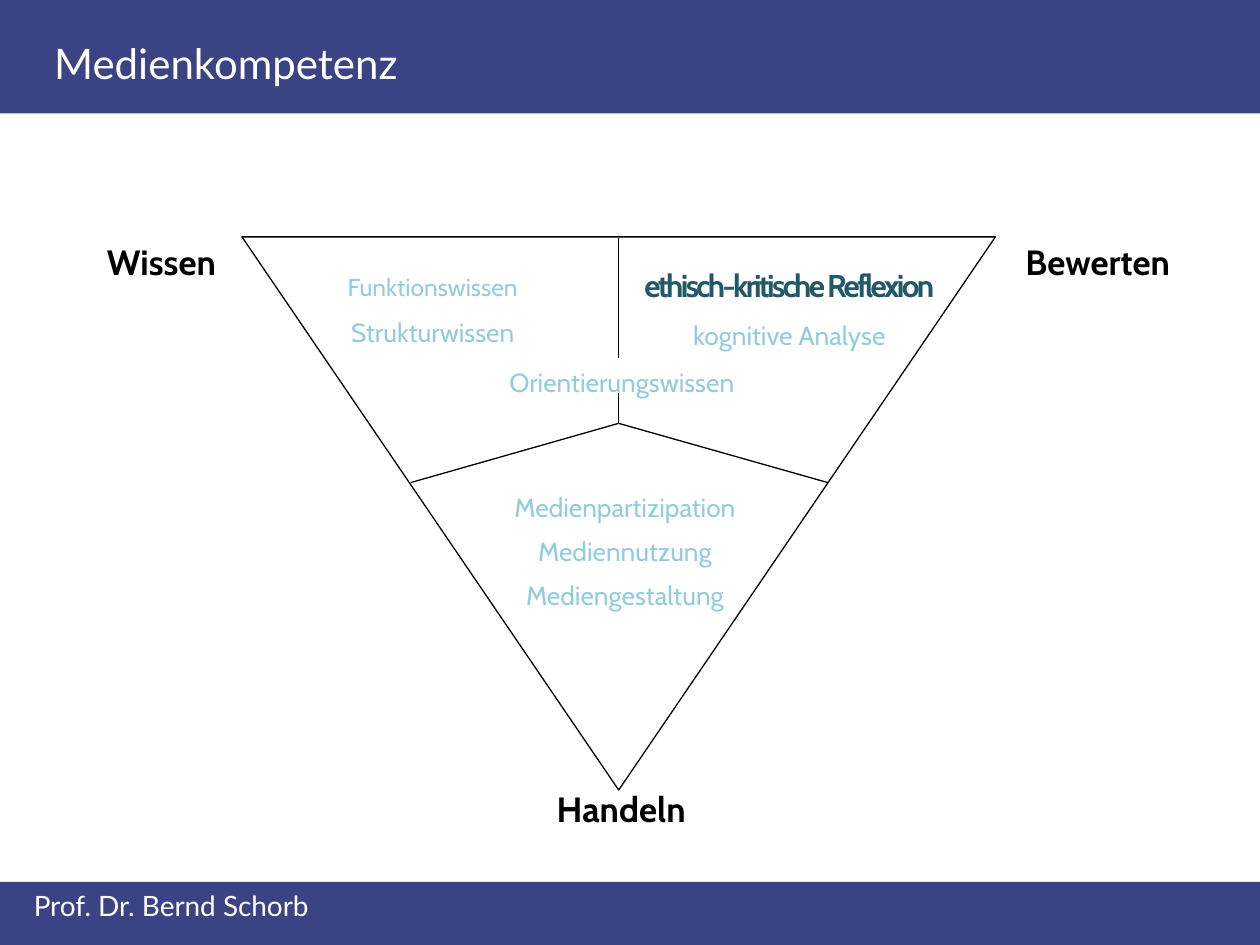
from dataclasses import dataclass

from lxml import etree
from pptx import Presentation
from pptx import util as u
from pptx.dml.color import RGBColor
from pptx.enum import shapes, text
from pptx.oxml.ns import qn


@dataclass(frozen=True)
class Theme:
    """Colours, fonts and type sizes of the slide."""
    band: str = "3C4384"
    white: str = "FFFFFF"
    black: str = "000000"
    light: str = "93CDDD"
    dark: str = "215968"
    head_font: str = "Lato"
    body_font: str = "Cabin"
    title: int = 24
    corner: int = 20
    strong: int = 18
    footer: int = 16
    body: int = 15
    small: int = 14
    line: float = 0.75


T = Theme()
BODY = dict(size=T.body, color=T.light)
CORNER = dict(size=T.corner, color=T.black, bold=True)
CENTER_X, HUB_Y = 4.91, 3.36


def rgb(value):
    """Turn a hex string into a colour."""
    return RGBColor.from_string(value)


def place(sp, left, top, width, height):
    """Set the position and size of a shape."""
    sp.left, sp.top = u.Inches(left), u.Inches(top)
    sp.width, sp.height = u.Inches(width), u.Inches(height)


def add_run(p, content, size, color, font=T.body_font, bold=False, spacing=None):
    """Add formatted text to a paragraph."""
    r = p.add_run()
    r.text = content
    r.font.size, r.font.name, r.font.bold = u.Pt(size), font, bold
    r.font.color.rgb = rgb(color)
    if spacing is not None:
        r.font._element.set("spc", str(int(spacing * 100)))


def write(sp, lines, wrap=False, center=False, leading=None):
    """Fill a shape with (text, format) lines."""
    tf = sp.text_frame
    tf.word_wrap = wrap
    tf.auto_size = text.MSO_AUTO_SIZE.SHAPE_TO_FIT_TEXT
    tf.vertical_anchor = text.MSO_ANCHOR.TOP
    for i, (content, style) in enumerate(lines):
        p = tf.add_paragraph() if i else tf.paragraphs[0]
        p.alignment = text.PP_ALIGN.CENTER if center else text.PP_ALIGN.LEFT
        if leading:
            p.line_spacing = leading
        add_run(p, content, **style)


def add_text(s, box, lines, **layout):
    """Add a text box with formatted lines."""
    write(s.shapes.add_textbox(*map(u.Inches, box)), lines, **layout)


def add_band(s, top, height):
    """Add a full-width coloured band."""
    sp = s.shapes.add_shape(shapes.MSO_SHAPE.RECTANGLE, 0, u.Inches(top),
                            u.Inches(10), u.Inches(height))
    sp.shadow.inherit = False
    sp.fill.solid()
    sp.fill.fore_color.rgb = rgb(T.band)
    sp.line.fill.background()
    return sp


def add_triangle(s, left, top, width, height):
    """Add an outlined triangle that points down."""
    sp = s.shapes.add_shape(shapes.MSO_SHAPE.ISOSCELES_TRIANGLE,
                            *map(u.Inches, (left, top, width, height)))
    sp.rotation = 180
    sp.shadow.inherit = False
    sp.fill.background()
    sp.line.color.rgb = rgb(T.black)
    sp.line.width = u.Pt(T.line)


def add_line(s, *ends):
    """Add a thin straight line."""
    line = s.shapes.add_connector(shapes.MSO_CONNECTOR.STRAIGHT, *map(u.Inches, ends))
    line.line.color.rgb = rgb(T.black)
    line.line.width = u.Pt(T.line)
    etree.SubElement(line.element.spPr, qn("a:effectLst"))


def add_frame(s):
    """Add the title band and the footer band with their text."""
    title = s.shapes.title
    add_band(s, 0, 0.9).element.addnext(title.element)
    place(title, 0.33, 0.25, 7.34, 0.5)
    write(title, [("Medienkompetenz",
                   dict(size=T.title, color=T.white, font=T.head_font))], wrap=True)
    add_band(s, 7, 0.5)
    add_text(s, (0.17, 7, 9.67, 0.37), [("Prof. Dr. Bernd Schorb",
             dict(size=T.footer, color=T.white, font=T.head_font))], wrap=True)


def add_diagram(s):
    """Add the divided triangle and the labels at its corners."""
    add_triangle(s, 1.92, 1.88, 5.98, 4.39)
    add_line(s, CENTER_X, 1.89, CENTER_X, 2.84)
    add_line(s, CENTER_X, 3.12, CENTER_X, HUB_Y)
    for x in (3.26, 6.57):
        add_line(s, x, 3.83, CENTER_X, HUB_Y)
    for label, box in (("Wissen", (0.75, 1.86, 1.1, 0.44)),
                       ("Bewerten", (8.04, 1.86, 1.47, 0.44)),
                       ("Handeln", (4.32, 6.2, 1.3, 0.43))):
        add_text(s, box, [(label, CORNER)])


def add_fields(s):
    """Add the terms inside the triangle."""
    add_text(s, (3.92, 3.75, 2.08, 1.16),
             [(term, BODY) for term in
              ("Medienpartizipation", "Mediennutzung", "Mediengestaltung")],
             center=True, leading=1.4)
    add_text(s, (2.63, 1.99, 1.61, 0.83),
             [("Funktionswissen", dict(size=T.small, color=T.light)),
              ("Strukturwissen", BODY)], center=True, leading=1.5)
    add_text(s, (4.86, 1.91, 2.81, 0.93),
             [("ethisch-kritische Reflexion",
               dict(size=T.strong, color=T.dark, bold=True, spacing=-1.5)),
              ("kognitive Analyse", BODY)], center=True, leading=1.5)
    add_text(s, (3.89, 2.86, 2.09, 0.43), [("Orientierungswissen", BODY)], center=True)


def main():
    """Build and save the slide."""
    prs = Presentation()
    prs.slide_width, prs.slide_height = u.Inches(10), u.Inches(7.5)
    s = prs.slides.add_slide(prs.slide_layouts[5])
    add_frame(s)
    add_diagram(s)
    add_fields(s)
    prs.save("out.pptx")


if __name__ == "__main__":
    main()
